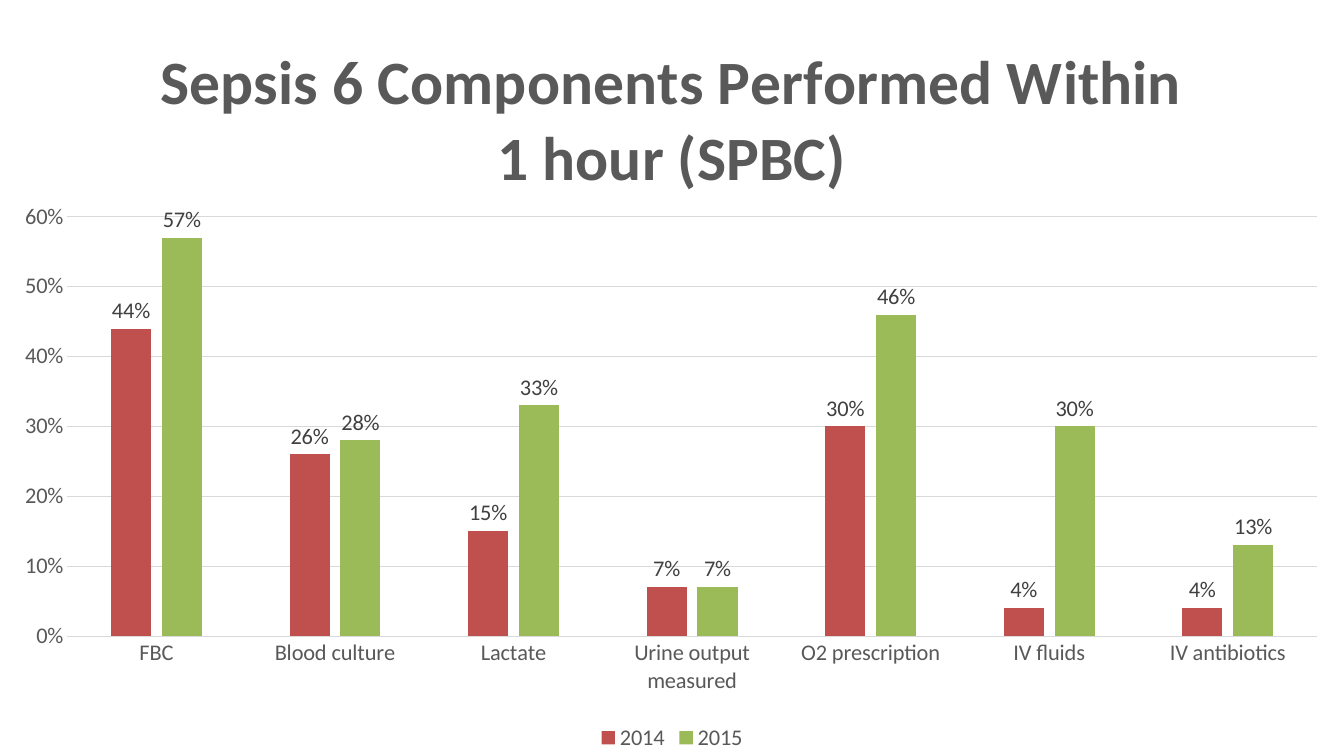
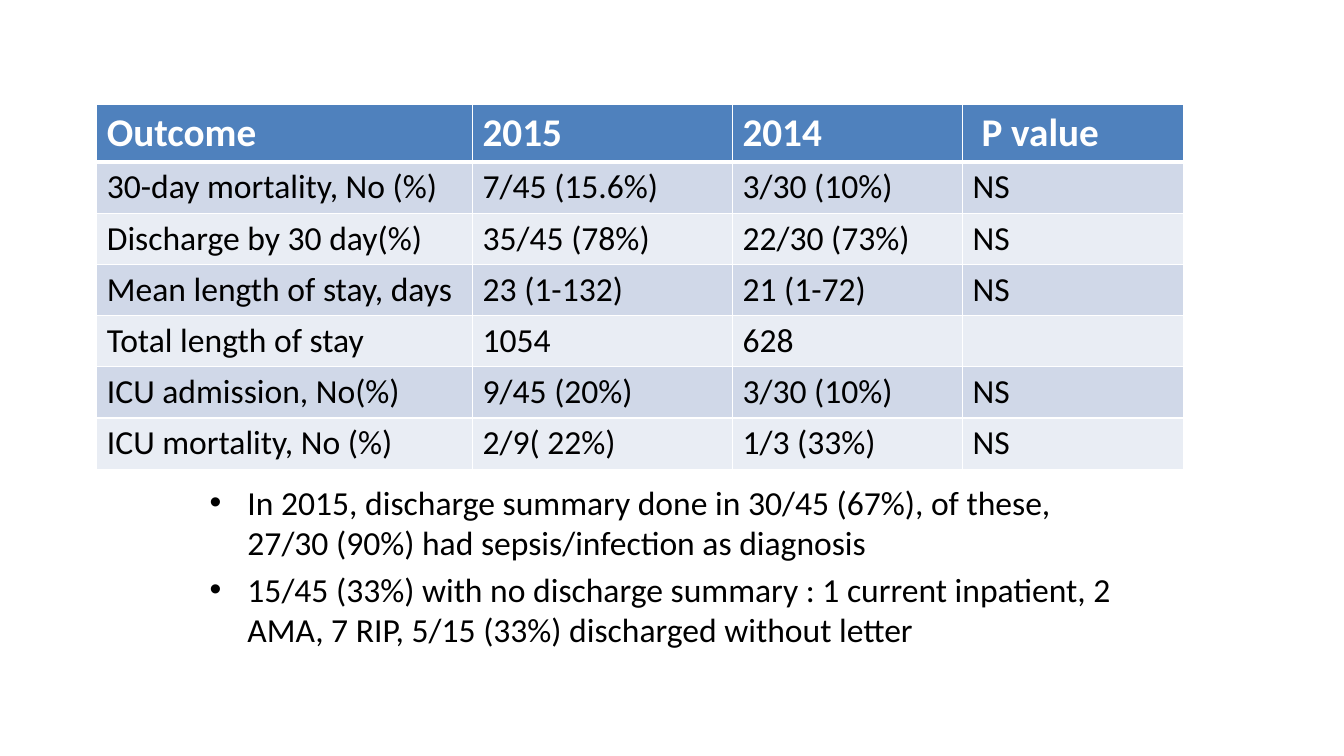
from dataclasses import dataclass

from pptx import Presentation
from pptx.chart.data import CategoryChartData
from pptx.dml.color import RGBColor
from pptx.enum.chart import XL_CHART_TYPE as ChartType
from pptx.enum.chart import XL_LABEL_POSITION as LabelPosition
from pptx.enum.chart import XL_LEGEND_POSITION as LegendPosition
from pptx.enum.chart import XL_TICK_MARK as TickMark
from pptx.enum.text import MSO_AUTO_SIZE as AutoSize
from pptx.oxml import parse_xml
from pptx.oxml.ns import nsdecls, qn
from pptx.util import Cm, Pt

FONT = "Calibri"
WHITE = RGBColor(0xFF, 0xFF, 0xFF)
BLACK = RGBColor(0x00, 0x00, 0x00)
GREY = RGBColor(0x59, 0x59, 0x59)
DARK_GREY = RGBColor(0x40, 0x40, 0x40)
LIGHT_GREY = RGBColor(0xD9, 0xD9, 0xD9)
RED = RGBColor(0xC0, 0x50, 0x4D)
GREEN = RGBColor(0x9B, 0xBB, 0x59)
BLUE = RGBColor(0x4F, 0x81, 0xBD)
BANDS = (RGBColor(0xD0, 0xD8, 0xE8), RGBColor(0xE9, 0xED, 0xF4))

SLIDE_WIDTH, SLIDE_HEIGHT = Cm(33.87), Cm(19.05)
PERCENT = "0%"


@dataclass(frozen=True)
class YearSeries:
    year: str
    values: tuple[float, ...]
    color: RGBColor


@dataclass(frozen=True)
class RowStyle:
    height: float
    size: int
    bold: bool
    color: RGBColor
    bottom_border: int


COMPONENTS = ("FBC", "Blood culture", "Lactate", "Urine output measured",
              "O2 prescription", "IV fluids", "IV antibiotics")
YEARS = (
    YearSeries("2014", (0.44, 0.26, 0.15, 0.07, 0.3, 0.04, 0.04), RED),
    YearSeries("2015", (0.57, 0.28, 0.33, 0.07, 0.46, 0.3, 0.13), GREEN),
)

HEADER_STYLE = RowStyle(1.46, 28, True, WHITE, 3)
BODY_STYLE = RowStyle(1.29, 24, False, BLACK, 1)
COLUMN_WIDTHS = (9.47, 6.55, 5.8, 5.58)
OUTCOMES = (
    ("Outcome", "2015", "2014", " P value"),
    ("30-day mortality, No (%)", "7/45 (15.6%)", "3/30 (10%)", "NS"),
    ("Discharge by 30 day(%)", "35/45 (78%)", "22/30 (73%)", "NS"),
    ("Mean length of stay, days", "23 (1-132)", "21 (1-72)", "NS"),
    ("Total length of stay", "1054", "628", ""),
    ("ICU admission, No(%)", "9/45 (20%)", "3/30 (10%)", "NS"),
    ("ICU mortality, No (%)", "2/9( 22%)", "1/3 (33%)", "NS"),
)
DISCHARGE_NOTES = (
    "In 2015, discharge summary done in 30/45 (67%), of these, "
    "27/30 (90%) had sepsis/infection as diagnosis",
    "15/45 (33%) with no discharge summary : 1 current inpatient, 2 AMA, "
    "7 RIP, 5/15 (33%) discharged without letter",
)


def set_font(font, size: int, color: RGBColor, bold: bool = False) -> None:
    font.name = FONT
    font.size = Pt(size)
    font.bold = bold
    font.color.rgb = color


def place_plot(chart, x: float, y: float, width: float, height: float) -> None:
    plot_area = chart.element.find(f".//{qn('c:plotArea')}")
    for layout in plot_area.findall(qn("c:layout")):
        plot_area.remove(layout)
    plot_area.insert(0, parse_xml(
        f'<c:layout {nsdecls("c")}><c:manualLayout>'
        '<c:layoutTarget val="inner"/><c:xMode val="edge"/><c:yMode val="edge"/>'
        f'<c:x val="{x}"/><c:y val="{y}"/><c:w val="{width}"/><c:h val="{height}"/>'
        '</c:manualLayout></c:layout>'))


def style_axes(chart) -> None:
    for axis in (chart.category_axis, chart.value_axis):
        axis.major_tick_mark = axis.minor_tick_mark = TickMark.NONE
        set_font(axis.tick_labels.font, 16, GREY)
    value_axis = chart.value_axis
    value_axis.minimum_scale, value_axis.maximum_scale = 0, 0.6
    value_axis.major_unit = 0.1
    value_axis.tick_labels.number_format = PERCENT
    value_axis.tick_labels.number_format_is_linked = False
    value_axis.format.line.fill.background()
    for line in (chart.category_axis.format.line, value_axis.major_gridlines.format.line):
        line.color.rgb = LIGHT_GREY
        line.width = Pt(0.75)


def style_series(series, color: RGBColor) -> None:
    series.format.fill.solid()
    series.format.fill.fore_color.rgb = color
    labels = series.data_labels
    labels.show_value = True
    labels.number_format = PERCENT
    labels.number_format_is_linked = False
    labels.position = LabelPosition.OUTSIDE_END
    set_font(labels.font, 16, DARK_GREY)


def add_components_slide(presentation) -> None:
    slide = presentation.slides.add_slide(presentation.slide_layouts[6])
    data = CategoryChartData(number_format=PERCENT)
    data.categories = COMPONENTS
    for entry in YEARS:
        data.add_series(entry.year, entry.values)
    top = Cm(0.18)
    chart = slide.shapes.add_chart(ChartType.COLUMN_CLUSTERED, 0, top, SLIDE_WIDTH,
                                   SLIDE_HEIGHT - top, data).chart
    set_font(chart.font, 16, BLACK)
    chart.has_title = True
    title = chart.chart_title.text_frame
    title.text = "Sepsis 6 Components Performed Within 1 hour (SPBC)"
    set_font(title.paragraphs[0].font, 44, GREY, bold=True)
    chart.has_legend = True
    chart.legend.position = LegendPosition.BOTTOM
    chart.legend.include_in_layout = False
    set_font(chart.legend.font, 16, GREY)
    style_axes(chart)
    plot = chart.plots[0]
    plot.gap_width, plot.overlap = 219, -27
    plot.vary_by_categories = False
    for series, entry in zip(plot.series, YEARS):
        style_series(series, entry.color)
    place_plot(chart, 0.05, 0.28, 0.93, 0.56)


def style_cell(cell, style: RowStyle, fill: RGBColor) -> None:
    properties = cell._tc.get_or_add_tcPr()
    for side, width in (("L", 1), ("R", 1), ("T", 1), ("B", style.bottom_border)):
        properties.append(parse_xml(
            f'<a:ln{side} {nsdecls("a")} w="{Pt(width)}"><a:solidFill>'
            f'<a:srgbClr val="{WHITE}"/></a:solidFill></a:ln{side}>'))
    cell.fill.solid()
    cell.fill.fore_color.rgb = fill
    set_font(cell.text_frame.paragraphs[0].font, style.size, style.color, style.bold)


def add_outcome_table(slide) -> None:
    styles = [HEADER_STYLE] + [BODY_STYLE] * (len(OUTCOMES) - 1)
    table = slide.shapes.add_table(
        len(OUTCOMES), len(COLUMN_WIDTHS), Cm(2.44), Cm(2.62),
        Cm(sum(COLUMN_WIDTHS)), Cm(sum(style.height for style in styles))).table
    for column, width in zip(table.columns, COLUMN_WIDTHS):
        column.width = Cm(width)
    for index, (row, texts, style) in enumerate(zip(table.rows, OUTCOMES, styles)):
        row.height = Cm(style.height)
        fill = BANDS[(index - 1) % 2] if index else BLUE
        for cell, text in zip(row.cells, texts):
            cell.text = text
            style_cell(cell, style, fill)


def add_outcomes_slide(presentation) -> None:
    slide = presentation.slides.add_slide(presentation.slide_layouts[1])
    title = slide.shapes.title
    title.element.getparent().remove(title.element)
    body = slide.placeholders[1]
    body.left, body.top, body.width, body.height = Cm(5.03), Cm(12.01), Cm(23.24), Cm(5.11)
    frame = body.text_frame
    frame.text = "\n".join(DISCHARGE_NOTES)
    frame.auto_size = AutoSize.NONE
    for paragraph in frame.paragraphs:
        set_font(paragraph.font, 24, BLACK)
    add_outcome_table(slide)


def main() -> None:
    presentation = Presentation()
    presentation.slide_width, presentation.slide_height = SLIDE_WIDTH, SLIDE_HEIGHT
    add_components_slide(presentation)
    add_outcomes_slide(presentation)
    presentation.save("out.pptx")


if __name__ == "__main__":
    main()
